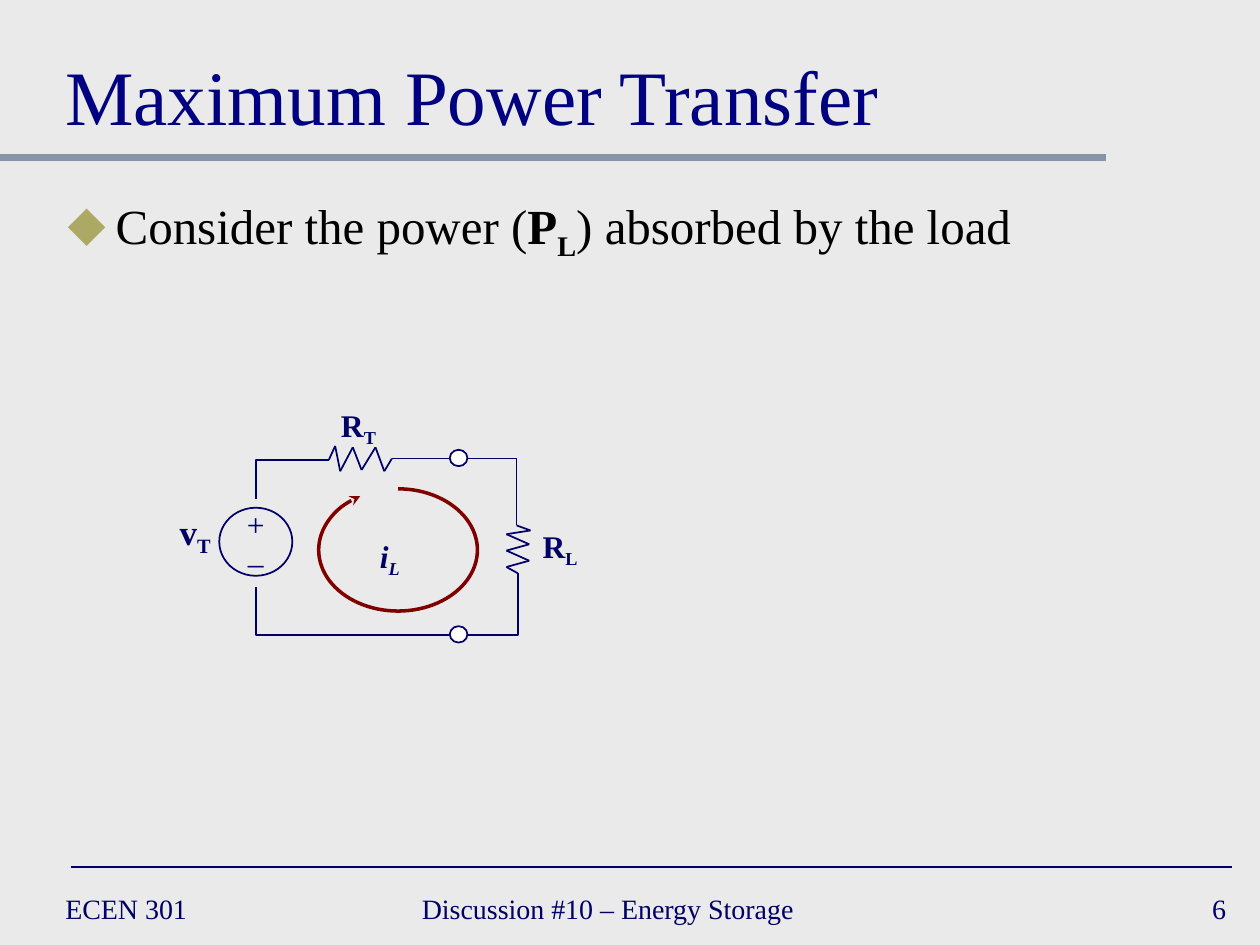
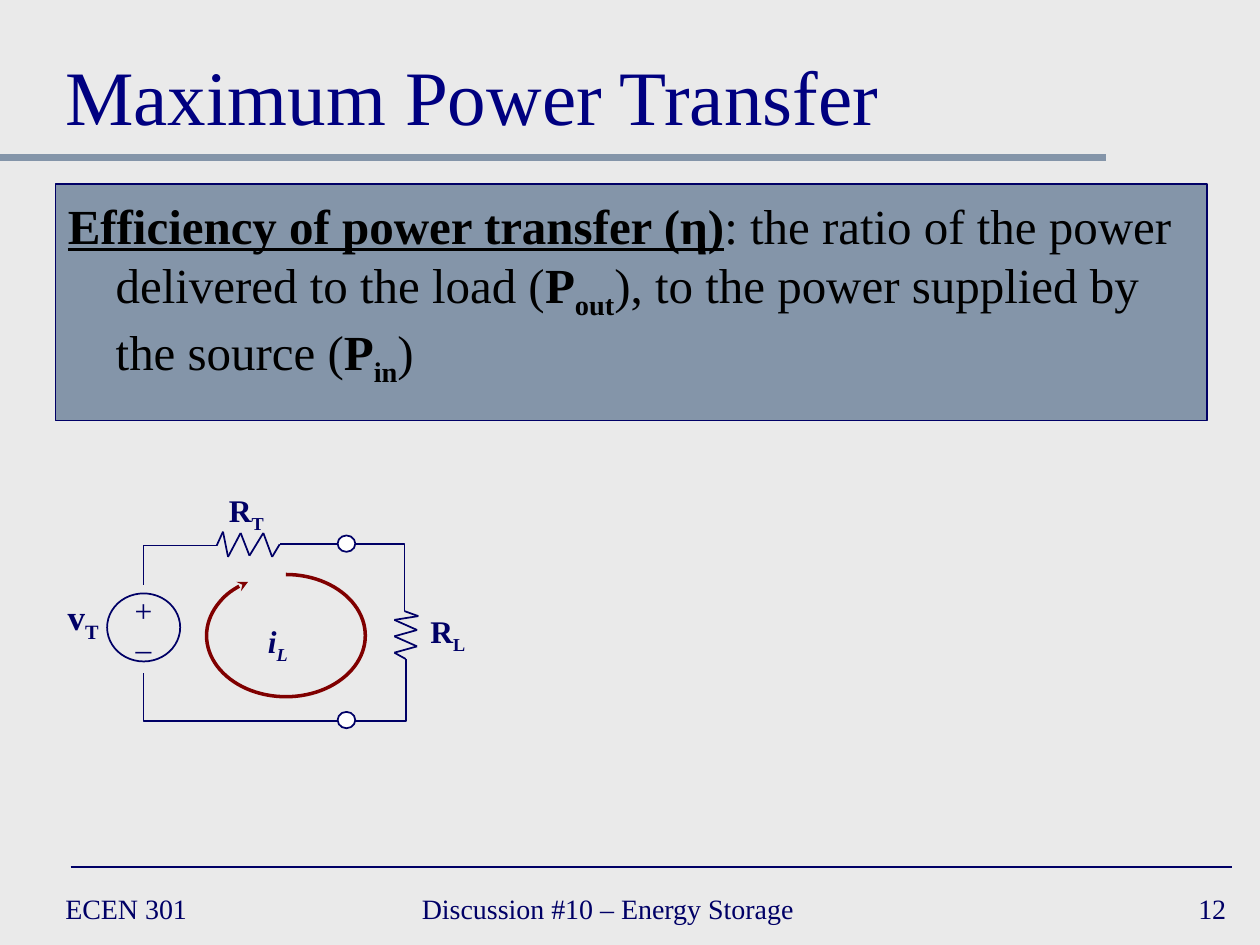
from dataclasses import dataclass
from itertools import pairwise

from lxml.etree import SubElement
from pptx import Presentation
from pptx.dml.color import RGBColor
from pptx.enum.shapes import MSO_CONNECTOR, MSO_SHAPE
from pptx.enum.text import MSO_ANCHOR, PP_ALIGN
from pptx.oxml.ns import qn
from pptx.util import Inches, Pt


@dataclass(frozen=True)
class Theme:
    font: str = "Times New Roman"
    background: str = "EAEAEA"
    title: str = "000080"
    ink: str = "000066"
    body: str = "000000"
    band: str = "8495A9"
    bullet: str = "ACA964"
    loop: str = "800000"
    terminal: str = "FFFFFF"
    title_size: int = 44
    body_size: int = 28
    source_size: int = 20
    label_size: int = 18
    footer_size: int = 16


THEME = Theme()

TITLE = "Maximum Power Transfer"
COURSE = "ECEN 301"
LECTURE = "Discussion #10 – Energy Storage"

# Style letters: b bold, i italic, u underline, s subscript
SLIDES = [
    {
        "number": "6",
        "body": [("Consider the power (", ""), ("P", "b"), ("L", "bs"),
                 (") absorbed by the load", "")],
        "body_height": 1.07,
        "boxed": False,
        "circuit_origin": (1.32, 3.17),
    },
    {
        "number": "12",
        "body": [("Efficiency of power transfer (η)", "bu"),
                 (": the ratio of the power delivered to the load (", ""),
                 ("P", "b"), ("out", "bs"),
                 ("), to the power supplied by the source (", ""),
                 ("P", "b"), ("in", "bs"), (")", "")],
        "body_height": 1.88,
        "boxed": True,
        "circuit_origin": (0.43, 3.85),
    },
]

CIRCUIT_LABELS = [
    ((0, 0.83, 0.46, 0.43), [[("v", "b"), ("T", "bs")]], THEME.source_size),
    ((0.54, 0.79, 0.34, 0.7), [[("+", "")], [("–", "")]], THEME.label_size),
    ((1.28, 0, 0.49, 0.4), [[("R", "b"), ("T", "bs")]], THEME.label_size),
    ((2.88, 0.96, 0.49, 0.4), [[("R", "b"), ("L", "bs")]], THEME.label_size),
    ((1.59, 1.04, 0.37, 0.4), [[("i", "bi"), ("L", "bis")]], THEME.label_size),
]
VOLTAGE_SOURCE = (0.42, 0.86, 0.58, 0.54)
TERMINALS = [(2.25, 0.4, 0.14, 0.13), (2.25, 1.8, 0.14, 0.13)]
CURRENT_LOOP = (1.21, 0.71, 1.26, 0.97)
LOOP_START, LOOP_END = 270, 234.8
RESISTORS = [
    [(1.29, 0.48), (1.34, 0.37), (1.38, 0.57), (1.48, 0.38),
     (1.55, 0.56), (1.66, 0.38), (1.73, 0.57), (1.79, 0.47)],
    [(2.78, 1), (2.89, 1.04), (2.7, 1.07), (2.88, 1.15),
     (2.7, 1.2), (2.88, 1.28), (2.7, 1.33), (2.79, 1.38)],
]
STRAIGHT_WIRE = [(2.25, 0.47), (1.79, 0.47)]
CORNER_WIRES = [
    [(2.25, 1.87), (0.71, 1.49)],
    [(1.29, 0.48), (0.71, 0.79)],
    [(2.39, 0.47), (2.78, 1)],
    [(2.39, 1.87), (2.79, 1.38)],
]


def rgb(color):
    return RGBColor.from_string(color)


def fill_paragraph(paragraph, pieces, size, color):
    for words, style in pieces:
        run = paragraph.add_run()
        run.text = words
        font = run.font
        font.name, font.size = THEME.font, Pt(size)
        font.color.rgb = rgb(color)
        font.bold, font.italic, font.underline = (k in style for k in "biu")
        if "s" in style:
            font._element.set("baseline", "-25000")


def add_text(slide, box, paragraphs, size, color, align=PP_ALIGN.LEFT,
             anchor=MSO_ANCHOR.TOP, wrap=True):
    area = slide.shapes.add_textbox(*map(Inches, box))
    frame = area.text_frame
    frame.word_wrap, frame.vertical_anchor = wrap, anchor
    for index, pieces in enumerate(paragraphs):
        paragraph = frame.add_paragraph() if index else frame.paragraphs[0]
        paragraph.alignment = align
        fill_paragraph(paragraph, pieces, size, color)
    return area


def add_line(slide, start, end, color=THEME.ink, width=1, corner=False):
    kind = MSO_CONNECTOR.ELBOW if corner else MSO_CONNECTOR.STRAIGHT
    line = slide.shapes.add_connector(kind, *map(Inches, (*start, *end)))
    line.line.color.rgb, line.line.width = rgb(color), Pt(width)
    properties = line._element.spPr
    if corner:
        properties.find(qn("a:prstGeom")).set("prst", "bentConnector2")
    SubElement(properties, qn("a:effectLst"))


def add_outline(slide, preset, box, fill=None, color=THEME.ink, width=1):
    shape = slide.shapes.add_shape(preset, *map(Inches, box))
    shape.shadow.inherit = False
    if fill:
        shape.fill.solid()
        shape.fill.fore_color.rgb = rgb(fill)
    else:
        shape.fill.background()
    shape.line.color.rgb, shape.line.width = rgb(color), Pt(width)
    return shape


def add_frame(slide, number):
    slide.background.fill.solid()
    slide.background.fill.fore_color.rgb = rgb(THEME.background)
    add_line(slide, (0, 1.25), (8.78, 1.25), THEME.band, 4)
    add_line(slide, (0.56, 6.88), (9.78, 6.88))
    for left, width, words, align in [
        (0.42, 2.17, COURSE, PP_ALIGN.LEFT),
        (3.25, 3.83, LECTURE, PP_ALIGN.LEFT),
        (7.75, 2.08, number, PP_ALIGN.RIGHT),
    ]:
        add_text(slide, (left, 7, width, 0.42), [[(words, "")]],
                 THEME.footer_size, THEME.ink, align, MSO_ANCHOR.MIDDLE)
    add_text(slide, (0.42, 0.17, 9.17, 1), [[(TITLE, "")]],
             THEME.title_size, THEME.title, anchor=MSO_ANCHOR.BOTTOM)


def add_body(slide, pieces, height, boxed):
    box = (0.44, 1.46, 9.14, height)
    if boxed:
        body = add_outline(slide, MSO_SHAPE.RECTANGLE, box, THEME.band, width=0.75)
    else:
        body = slide.shapes.add_textbox(*map(Inches, box))
    frame = body.text_frame
    frame.word_wrap, frame.vertical_anchor = True, MSO_ANCHOR.TOP
    frame.margin_top = Inches(0.09)
    paragraph = frame.paragraphs[0]
    paragraph.alignment = PP_ALIGN.LEFT
    layout = paragraph._p.get_or_add_pPr()
    layout.set("marL", str(Inches(0.38)))
    layout.set("indent", str(Inches(-0.38)))
    if not boxed:
        bullet_color = SubElement(layout, qn("a:buClr"))
        SubElement(bullet_color, qn("a:srgbClr"), val=THEME.bullet)
        SubElement(layout, qn("a:buChar"), char="◆")
    fill_paragraph(paragraph, pieces, THEME.body_size, THEME.body)


def add_circuit(slide, origin):
    def place(point):
        return point[0] + origin[0], point[1] + origin[1]

    def place_box(box):
        return *place(box[:2]), *box[2:]

    add_outline(slide, MSO_SHAPE.OVAL, place_box(VOLTAGE_SOURCE))
    for terminal in TERMINALS:
        add_outline(slide, MSO_SHAPE.OVAL, place_box(terminal), THEME.terminal)
    for path in [*RESISTORS, STRAIGHT_WIRE]:
        for start, end in pairwise(path):
            add_line(slide, place(start), place(end))
    for start, end in CORNER_WIRES:
        add_line(slide, place(start), place(end), corner=True)

    loop = add_outline(slide, MSO_SHAPE.ARC, place_box(CURRENT_LOOP),
                       color=THEME.loop, width=2)
    for index, degrees in enumerate((LOOP_START, LOOP_END)):
        loop.adjustments[index] = degrees * 0.6
    SubElement(loop.line._get_or_add_ln(), qn("a:tailEnd"), type="stealth")

    for box, paragraphs, size in CIRCUIT_LABELS:
        add_text(slide, place_box(box), paragraphs, size, THEME.ink,
                 PP_ALIGN.CENTER, wrap=False)


def main():
    deck = Presentation()
    deck.slide_width, deck.slide_height = Inches(10), Inches(7.5)
    for content in SLIDES:
        slide = deck.slides.add_slide(deck.slide_layouts[6])
        add_frame(slide, content["number"])
        add_body(slide, content["body"], content["body_height"], content["boxed"])
        add_circuit(slide, content["circuit_origin"])
    deck.save("out.pptx")


if __name__ == "__main__":
    main()
